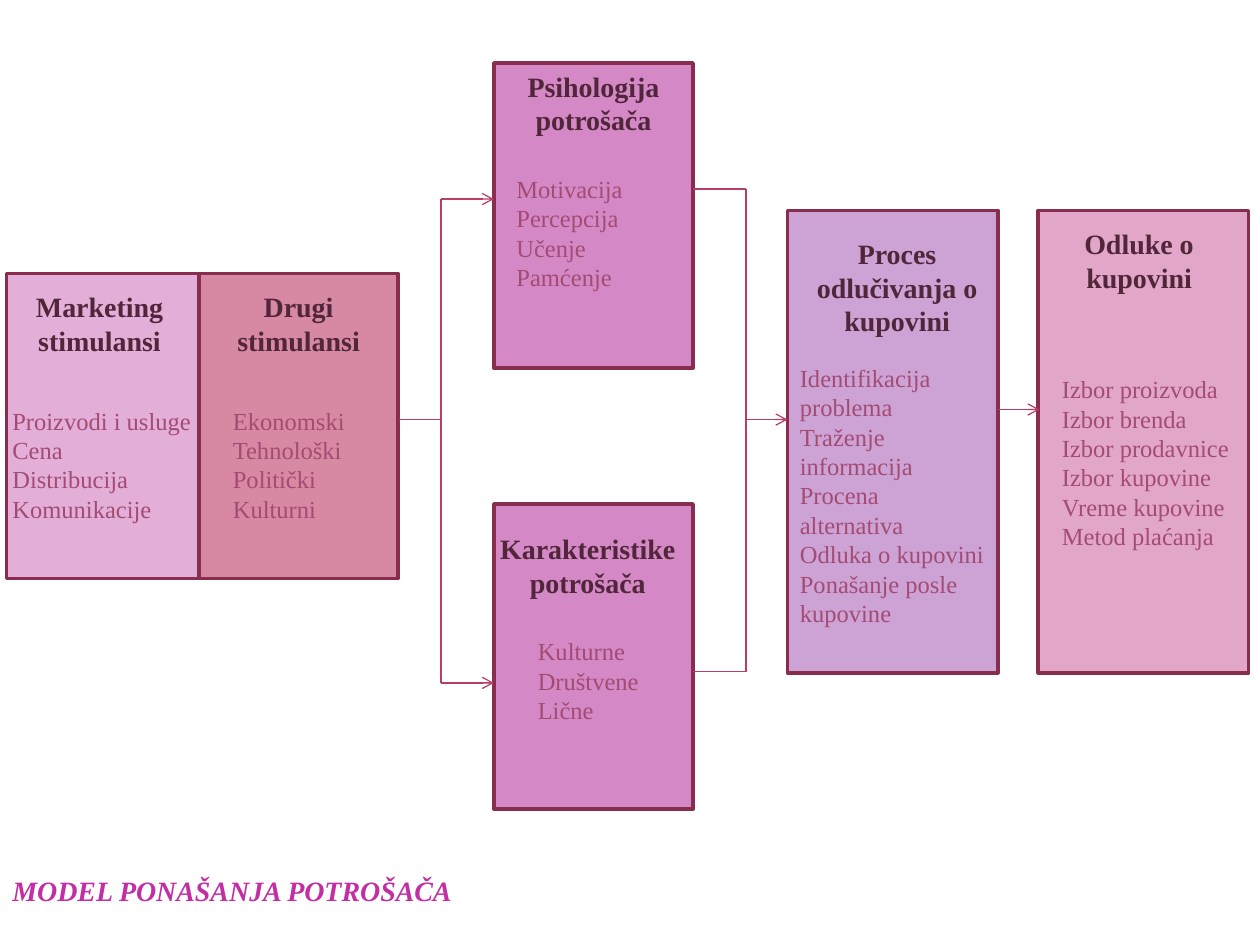
from dataclasses import dataclass

from lxml import etree
from pptx import Presentation
from pptx.dml.color import RGBColor
from pptx.enum.shapes import MSO_CONNECTOR as Connector, MSO_SHAPE as Shape
from pptx.enum.text import MSO_ANCHOR as Anchor, PP_ALIGN as Align
from pptx.oxml.ns import qn
from pptx.util import Inches, Pt


@dataclass(frozen=True)
class Theme:
    font: str = "Times New Roman"
    heading: RGBColor = RGBColor.from_string("51253A")
    item: RGBColor = RGBColor.from_string("A34B73")
    title: RGBColor = RGBColor.from_string("C22EA4")
    border: RGBColor = RGBColor.from_string("882D4D")
    arrow: RGBColor = RGBColor.from_string("B83D68")
    big: Pt = Pt(16)
    small: Pt = Pt(14)
    border_width: Pt = Pt(2)
    arrow_width: Pt = Pt(0.75)


theme = Theme()
heading_format = {"size": theme.big, "bold": True}
item_format = {"size": theme.small}
title_format = {"size": theme.big, "bold": True, "italic": True}

prs = Presentation()
prs.slide_width, prs.slide_height = Inches(10), Inches(7.5)
s = prs.slides.add_slide(prs.slide_layouts[6])


def add_text(at, lines, font_format, color, align=Align.LEFT):
    tf = s.shapes.add_textbox(*map(Inches, at)).text_frame
    tf.word_wrap = True
    for i, line in enumerate(lines):
        p = tf.paragraphs[0] if i == 0 else tf.add_paragraph()
        p.alignment = align
        r = p.add_run()
        r.text = line
        for name, value in font_format.items():
            setattr(r.font, name, value)
        r.font.name = theme.font
        r.font.color.rgb = color
    return tf


def add_line(x1, y1, x2, y2, arrow=False):
    ends = map(Inches, (x1, y1, x2, y2))
    line = s.shapes.add_connector(Connector.STRAIGHT, *ends)
    line.line.color.rgb = theme.arrow
    line.line.width = theme.arrow_width
    if arrow:
        ln = line.line._get_or_add_ln()
        etree.SubElement(ln, qn("a:tailEnd"), type="arrow")
    etree.SubElement(line._element.spPr, qn("a:effectLst"))


# Boxes: place, fill, heading with its place, items with their place
boxes = [
    ((0.05, 2.17, 1.58, 2.42), "E3AFD8",
     "Marketing stimulansi", (0, 2.25, 1.58, 0.64),
     ["Proizvodi i usluge", "Cena", "Distribucija", "Komunikacije"],
     (0, 3.17, 1.83, 1.04)),
    ((1.58, 2.17, 1.58, 2.42), "D788A3",
     "Drugi stimulansi", (1.58, 2.25, 1.58, 0.64),
     ["Ekonomski", "Tehnološki", "Politički", "Kulturni"],
     (1.75, 3.17, 1.83, 1.04)),
    ((3.92, 0.5, 1.58, 2.42), "D488C5",
     "Psihologija potrošača", (3.92, 0.5, 1.58, 0.64),
     ["Motivacija", "Percepcija", "Učenje", "Pamćenje"],
     (4, 1.33, 1.42, 1.04)),
    ((3.92, 4, 1.58, 2.42), "D488C5",
     "Karakteristike potrošača", (3.83, 4.17, 1.67, 0.64),
     ["Kulturne", "Društvene", "Lične"],
     (4.17, 5, 1.17, 0.81)),
    ((6.25, 1.67, 1.67, 3.67), "CDA3D6",
     "Proces odlučivanja o kupovini", (6.33, 1.83, 1.58, 0.91),
     ["Identifikacija problema", "Traženje informacija", "Procena alternativa",
      "Odluka o kupovini", "Ponašanje posle kupovine"],
     (6.25, 2.83, 1.67, 2.22)),
    ((8.24, 1.67, 1.67, 3.67), "E2A7C8",
     "Odluke o kupovini", (8.25, 1.75, 1.58, 0.64),
     ["Izbor proizvoda", "Izbor brenda", "Izbor prodavnice",
      "Izbor kupovine", "Vreme kupovine", "Metod plaćanja"],
     (8.33, 2.92, 1.67, 1.51)),
]
for at, fill, heading, heading_at, items, items_at in boxes:
    sp = s.shapes.add_shape(Shape.FLOWCHART_PROCESS, *map(Inches, at))
    sp.shadow.inherit = False
    sp.fill.solid()
    sp.fill.fore_color.rgb = RGBColor.from_string(fill)
    sp.line.color.rgb = theme.border
    sp.line.width = theme.border_width
    add_text(heading_at, [heading], heading_format, theme.heading, Align.CENTER)
    add_text(items_at, items, item_format, theme.item)

# Stimuli branch out to the two consumer boxes
add_line(3.17, 3.33, 3.5, 3.33)
add_line(3.5, 5.42, 3.5, 1.58)
for y in (1.58, 5.42):
    add_line(3.5, y, 3.92, y, arrow=True)

# Consumer boxes join into the decision process
for y in (1.5, 5.33):
    add_line(5.5, y, 5.92, y)
add_line(5.92, 5.33, 5.92, 1.5)
add_line(5.92, 3.33, 6.25, 3.33, arrow=True)

# Process leads to the decisions
add_line(7.92, 3.25, 8.25, 3.25, arrow=True)

# Title at the foot
tf = add_text((0, 6.5, 8.2, 0.75), ["MODEL PONAŠANJA POTROŠAČA"],
              title_format, theme.title)
tf.vertical_anchor = Anchor.BOTTOM
tf.paragraphs[0].line_spacing = Pt(20)

prs.save("out.pptx")
